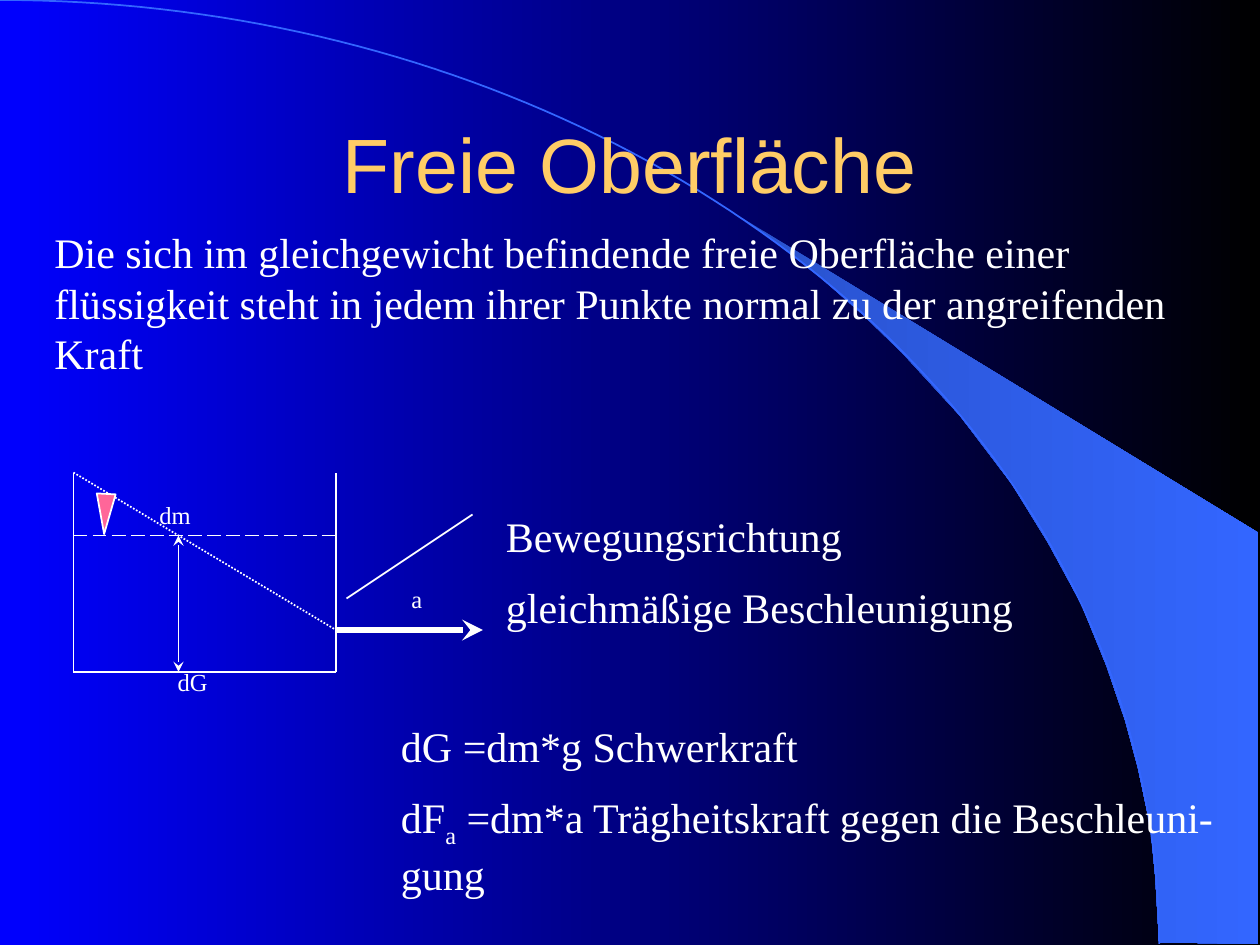
"""Builds the slide "Freie Oberfläche" about the free surface of a liquid."""
from math import cos, pi, sin

from pptx import Presentation
from pptx.dml.color import RGBColor
from pptx.enum.dml import MSO_LINE_DASH_STYLE as DASH
from pptx.enum.shapes import MSO_CONNECTOR, MSO_SHAPE
from pptx.enum.text import MSO_ANCHOR as ANCHOR, PP_ALIGN as ALIGN
from pptx.oxml.ns import qn
from pptx.util import Pt
from lxml.etree import SubElement

BLACK = RGBColor(0x00, 0x00, 0x00)
WHITE = RGBColor(0xFF, 0xFF, 0xFF)
GOLD = RGBColor(0xFF, 0xCC, 0x66)
PINK = RGBColor(0xFF, 0x66, 0x99)
DEEP_BLUE = RGBColor(0x00, 0x00, 0xFF)
MID_BLUE = RGBColor(0x29, 0x52, 0xCC)
LIGHT_BLUE = RGBColor(0x33, 0x66, 0xFF)

presentation = Presentation()
presentation.slide_width = Pt(720)
presentation.slide_height = Pt(540)
slide = presentation.slides.add_slide(presentation.slide_layouts[6])
shapes = slide.shapes


def add_text(text, left, top, width, height, size=24, font="Times New Roman", color=WHITE,
             align=ALIGN.LEFT, anchor=ANCHOR.TOP, gap=12, indents=(0, 0, 0)):
    frame = shapes.add_textbox(Pt(left), Pt(top), Pt(width), Pt(height)).text_frame
    frame.word_wrap = True
    frame.vertical_anchor = anchor
    for index, content in enumerate(text.split("\n")):
        paragraph = frame.paragraphs[0] if index == 0 else frame.add_paragraph()
        paragraph.alignment = align
        paragraph.space_before = Pt(gap if index else 0)
        paragraph._p.get_or_add_pPr().set("marL", str(Pt(indents[index])))
        for part, piece in enumerate(content.split("_")):
            run = paragraph.add_run()
            run.text = piece
            run.font.size = Pt(size)
            run.font.name = font
            run.font.color.rgb = color
            if part % 2:
                run.font._element.set("baseline", "-25000")


def add_line(start, end, weight=1, dash=None, ends=()):
    line = shapes.add_connector(MSO_CONNECTOR.STRAIGHT, *map(Pt, start + end))
    line.line.color.rgb = WHITE
    line.line.width = Pt(weight)
    if dash:
        line.line.dash_style = dash
    properties = line.element.spPr
    for end_name in ends:
        SubElement(properties.find(qn("a:ln")), qn(end_name)).set("type", "stealth")
    SubElement(properties, qn("a:effectLst"))


wedge_points = [
    (662.4, 538.6), (719.3, 539.3), (719.3, 304.6), (424.1, 124.6), (449.3, 143.3),
    (470.2, 159.8), (493.2, 180), (515.5, 201.6), (548.6, 237.6), (578.2, 276.5),
    (599, 310.3), (617.8, 344.9), (632.2, 380.2), (643, 411.8), (650.2, 438.5),
    (657.4, 472.3), (660.2, 501.1),
]
wedge_builder = shapes.build_freeform(*map(Pt, wedge_points[0]))
wedge_builder.add_line_segments([(Pt(x), Pt(y)) for x, y in wedge_points[1:]], close=True)
wedge = wedge_builder.convert_to_shape()
wedge.shadow.inherit = False
wedge.line.fill.background()

for fill, colors in ((slide.background.fill, (DEEP_BLUE, BLACK)),
                     (wedge.fill, (MID_BLUE, LIGHT_BLUE))):
    fill.gradient()
    fill.gradient_angle = 0
    for position, (stop, color) in enumerate(zip(fill.gradient_stops, colors)):
        stop.position = position
        stop.color.rgb = color

ARC_STEPS = 90
arc_angles = [step * pi / 2 / ARC_STEPS for step in range(1, ARC_STEPS + 1)]
arc_builder = shapes.build_freeform(0, 0)
arc_builder.add_line_segments(
    [(Pt(662.4 * sin(angle)), Pt(539.3 * (1 - cos(angle)))) for angle in arc_angles], close=False)
arc = arc_builder.convert_to_shape()
arc.shadow.inherit = False
arc.fill.background()
arc.line.color.rgb = LIGHT_BLUE
arc.line.width = Pt(1)

add_text("Freie Oberfläche", 54, 48, 612, 90, size=44, font="Arial", color=GOLD,
         align=ALIGN.CENTER, anchor=ANCHOR.MIDDLE)
add_text("Die sich im gleichgewicht befindende freie Oberfläche einer flüssigkeit steht in "
         "jedem ihrer Punkte normal zu der angreifenden Kraft", 24, 126, 695.5, 93.6)

tank_left, tank_right, tank_top, tank_bottom = 42, 192, 270, 384
rest_level, tilted_level, depth_x = 306, 360, 102
add_line((tank_left, tank_top), (tank_left, tank_bottom))
add_line((tank_left, tank_bottom), (tank_right, tank_bottom))
add_line((tank_right, tank_bottom), (tank_right, tank_top))
add_line((tank_left, rest_level), (tank_right, rest_level), dash=DASH.LONG_DASH)
add_line((tank_left, tank_top), (tank_right, tilted_level), dash=DASH.ROUND_DOT)
add_line((depth_x, rest_level), (depth_x, tank_bottom), ends=("a:headEnd", "a:tailEnd"))

level_mark = shapes.add_shape(MSO_SHAPE.ISOSCELES_TRIANGLE, Pt(54.7), Pt(282.2), Pt(10.8), Pt(23))
level_mark.rotation = 183
level_mark.shadow.inherit = False
level_mark.fill.solid()
level_mark.fill.fore_color.rgb = PINK
level_mark.line.color.rgb = WHITE
level_mark.line.width = Pt(1)

add_line((tank_right, tilted_level), (276, tilted_level), weight=4, ends=("a:tailEnd",))
add_text("dm\na\ndG", 84, 282.2, 252, 124.6, size=14, gap=31, indents=(0, 144, 10.5))
add_line((198, 342), (270, 294))

add_text("Bewegungsrichtung\ngleichmäßige Beschleunigung", 282, 288, 306, 79.2)
add_text("dG =dm*g Schwerkraft\ndF_a_ =dm*a Trägheitskraft gegen die Beschleuni-gung",
         222, 408, 497.5, 108)

presentation.save("out.pptx")
